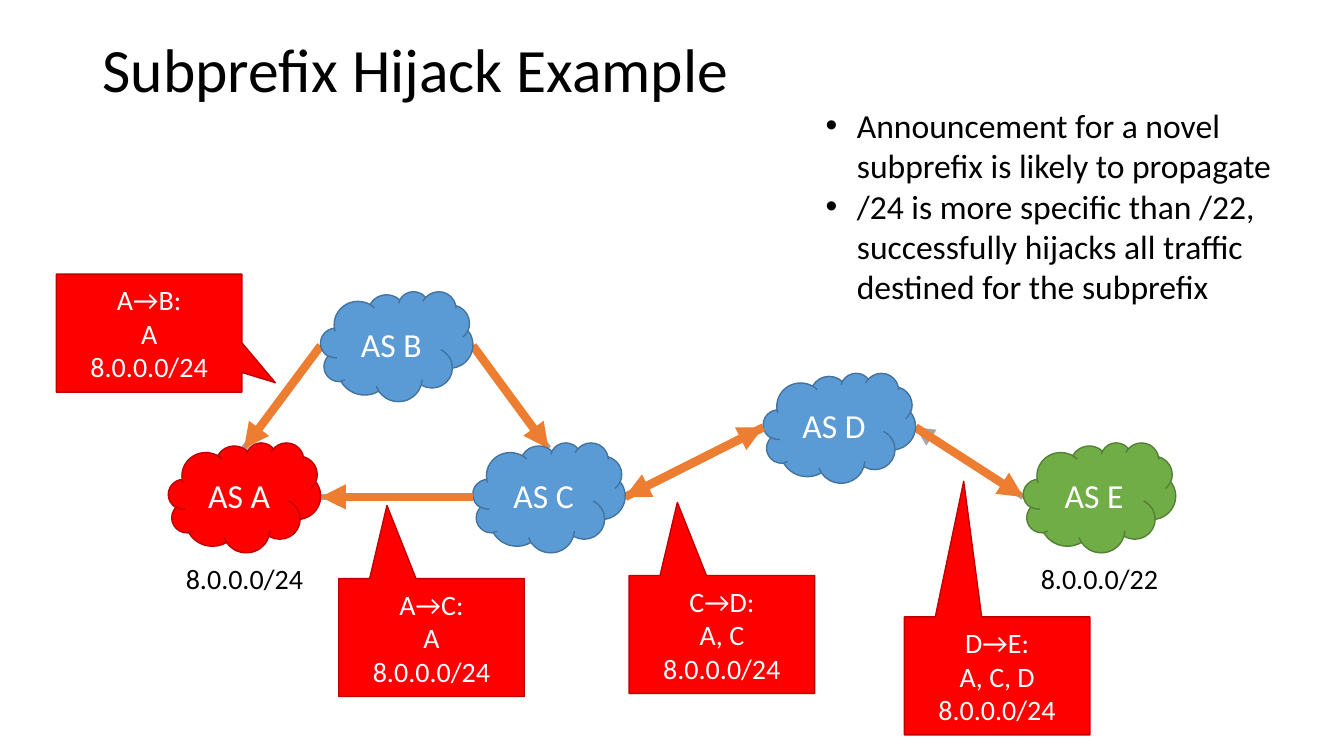
from lxml.etree import SubElement
from pptx import Presentation
from pptx.dml.color import RGBColor
from pptx.enum.shapes import MSO_CONNECTOR, MSO_SHAPE
from pptx.enum.text import MSO_ANCHOR, PP_ALIGN
from pptx.oxml.ns import qn
from pptx.util import Pt

PX = 9144  # 100 px to the inch
FONT = "Calibri"
BLACK, WHITE, GREY, ORANGE = "000000", "FFFFFF", "A5A5A5", "ED7D31"
RED, BLUE, GREEN = ("FF0000", "C00000"), ("5B9BD5", "43739E"), ("70AD47", "538035")
CLOUD_WIDTH, CLOUD_HEIGHT = 151, 109
CALLOUT_WIDTH, CALLOUT_HEIGHT = 184, 117
HIJACKED = "8.0.0.0/24"

# Autonomous systems: left, top, (fill, outline)
CLOUDS = {
    "E": (1015, 439, GREEN),
    "B": (318, 289, BLUE),
    "C": (469, 439, BLUE),
    "A": (167, 439, RED),
    "D": (757, 370, BLUE),
}

# Links between cloud sides: start, end, arrowhead at the end
BASE_LINKS = [
    ("A right", "C left", False),
    ("A top", "B left", False),
    ("C top", "B right", False),
    ("D left", "C right", True),
    ("E left", "D right", True),
]
ROUTES_BELOW = [
    ("B right", "C top"),
    ("C right", "D left"),
    ("D right", "E left"),
    ("B left", "A top"),
]
ROUTES_ABOVE = [("C left", "A right"), ("D left", "C right")]

# Announcements: left, top, pointer offsets, hop, path of systems
CALLOUTS = [
    (56, 272, (0.68, 0.42), "A→B:", "A"),
    (336, 574, (-0.24, -1.12), "A→C:", "A"),
    (624, 571, (-0.24, -1.12), "C→D:", "A, C"),
    (897, 612, (-0.18, -1.65), "D→E:", "A, C, D"),
]


def color(value):
    return RGBColor.from_string(value)


def write(shape, lines, size, ink, align=PP_ALIGN.CENTER, anchor=MSO_ANCHOR.MIDDLE, wrap=True):
    frame = shape.text_frame
    frame.word_wrap = wrap
    frame.vertical_anchor = anchor
    frame.text = "\n".join(lines)
    for para in frame.paragraphs:
        para.alignment = align
        para.font.name = FONT
        para.font.size = Pt(size)
        para.font.color.rgb = color(ink)
    return frame.paragraphs


def add_text(page, left, top, width, height, lines, size, **layout):
    box = page.shapes.add_textbox(left * PX, top * PX, width * PX, height * PX)
    return write(box, lines, size, BLACK, **layout)


def add_bullet(para):
    properties = para._p.get_or_add_pPr()
    properties.set("marL", str(31 * PX))
    properties.set("indent", str(-31 * PX))
    SubElement(properties, qn("a:buFont"), typeface="Arial")
    SubElement(properties, qn("a:buChar"), char="•")


def add_block(page, kind, left, top, width, height, colors, lines, size):
    shape = page.shapes.add_shape(kind, left * PX, top * PX, width * PX, height * PX)
    fill, outline = colors
    shape.shadow.inherit = False
    shape.fill.solid()
    shape.fill.fore_color.rgb = color(fill)
    shape.line.color.rgb = color(outline)
    shape.line.width = Pt(1)
    write(shape, lines, size, WHITE)
    return shape


def cloud_side(place):
    name, side = place.split()
    left, top, _ = CLOUDS[name]
    across, down = {
        "left": (0, CLOUD_HEIGHT // 2),
        "right": (CLOUD_WIDTH, CLOUD_HEIGHT // 2),
        "top": (CLOUD_WIDTH // 2, 6),
    }[side]
    return (left + across) * PX, (top + down) * PX


def add_link(page, start, end, ink, width, arrow=True):
    link = page.shapes.add_connector(
        MSO_CONNECTOR.STRAIGHT, *cloud_side(start), *cloud_side(end))
    link.line.color.rgb = color(ink)
    link.line.width = Pt(width)
    if arrow:
        SubElement(link.line._get_or_add_ln(), qn("a:tailEnd"), type="triangle")
    SubElement(link._element.spPr, qn("a:effectLst"))


def add_routes(page, routes):
    for start, end in routes:
        add_link(page, start, end, ORANGE, 6)


def main():
    deck = Presentation()
    deck.slide_width, deck.slide_height = 1333 * PX, 750 * PX
    page = deck.slides.add_slide(deck.slide_layouts[6])

    # Title
    title = add_text(page, 92, -1, 1150, 145, ["Subprefix Hijack Example"], 44,
                     align=PP_ALIGN.LEFT)
    title[0].line_spacing = 0.9

    # Links under the clouds
    for start, end, arrow in BASE_LINKS:
        add_link(page, start, end, GREY, 4.5, arrow)
    add_routes(page, ROUTES_BELOW)

    # Clouds and the prefixes they originate
    for name, (left, top, colors) in CLOUDS.items():
        add_block(page, MSO_SHAPE.CLOUD, left, top, CLOUD_WIDTH, CLOUD_HEIGHT,
                  colors, [f"AS {name}"], 24)
    for left, prefix in [(1022, "8.0.0.0/22"), (174, HIJACKED)]:
        add_text(page, left, 552, 137, 44, [prefix], 20,
                 anchor=MSO_ANCHOR.TOP, wrap=False)

    # Announcement callouts
    for left, top, pointer, hop, systems in CALLOUTS:
        callout = add_block(page, MSO_SHAPE.RECTANGULAR_CALLOUT, left, top,
                            CALLOUT_WIDTH, CALLOUT_HEIGHT, RED,
                            [hop, systems, HIJACKED], 20)
        for index, offset in enumerate(pointer):
            callout.adjustments[index] = offset

    # Explanation
    notes = [
        "Announcement for a novel subprefix is likely to propagate",
        "/24 is more specific than /22, successfully hijacks all traffic "
        "destined for the subprefix",
    ]
    for para in add_text(page, 809, 99, 498, 212, notes, 24,
                         align=PP_ALIGN.LEFT, anchor=MSO_ANCHOR.TOP):
        add_bullet(para)

    # Links over the clouds
    add_routes(page, ROUTES_ABOVE)

    deck.save("out.pptx")


if __name__ == "__main__":
    main()
